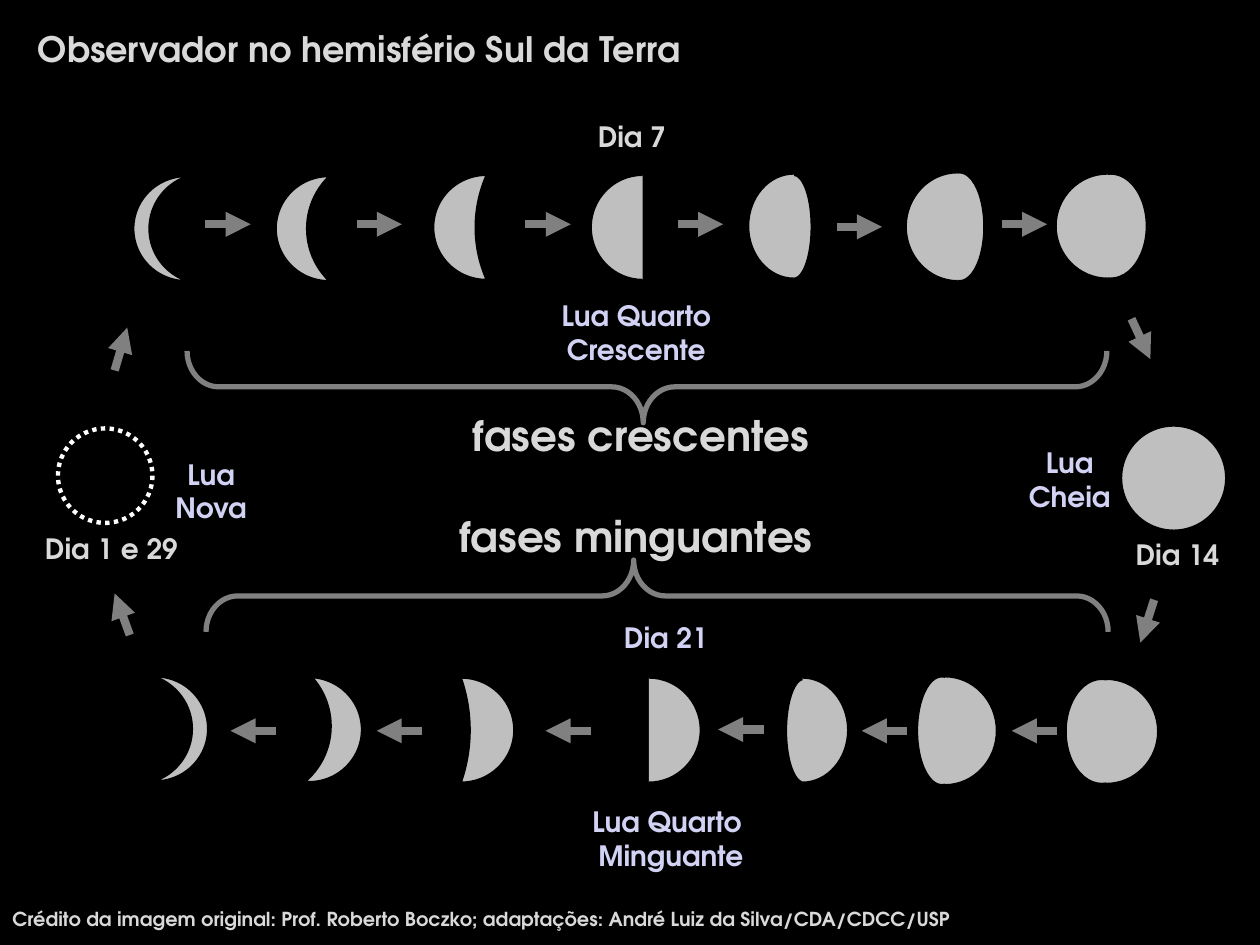
from dataclasses import dataclass
from typing import Any

from lxml.etree import SubElement
from pptx import Presentation
from pptx.dml.color import RGBColor
from pptx.enum.dml import MSO_LINE
from pptx.enum.shapes import MSO_CONNECTOR, MSO_SHAPE
from pptx.enum.text import MSO_AUTO_SIZE, PP_ALIGN
from pptx.oxml.ns import qn
from pptx.util import Emu, Pt

PX = 9144  # one px is 1/100 inch
BEND = 0.55  # handle length of a quarter arc


@dataclass(frozen=True)
class Theme:
    font: str = "TeX Gyre Adventor"
    night: str = "000000"
    glow: str = "BFBFBF"
    grey: str = "808080"
    ring: str = "FFFFFF"
    pale: str = "D9D9D9"
    lilac: str = "D2D2F4"
    title: int = 20
    phase: int = 24
    label: int = 16
    credit: int = 11


@dataclass(frozen=True)
class Box:
    x: int
    y: int
    w: int
    h: int


@dataclass(frozen=True)
class Label:
    box: Box
    text: str
    color: str
    size: int
    wrap: bool = True
    align: Any = PP_ALIGN.CENTER


@dataclass(frozen=True)
class Moon:
    box: Box
    lit: float
    flip: bool = False
    turn: int = 0


@dataclass(frozen=True)
class Half:
    box: Box
    side: int  # -1 bulges left, 1 bulges right


@dataclass(frozen=True)
class Brace:
    box: Box
    turn: int
    tip: float


@dataclass(frozen=True)
class Arrow:
    x: int
    y: int
    to_x: int
    to_y: int


T = Theme()


def px(n: float) -> Emu:
    return Emu(round(n * PX))


def rgb(code: str) -> RGBColor:
    return RGBColor.from_string(code)


def style(item: Any, form: dict[str, Any]) -> None:
    for key, val in form.items():
        setattr(item, key, val)


def paint(shape: Any, fill: str | None, line: str, width: float = 1) -> None:
    shape.shadow.inherit = False
    for part, code in ((shape.fill, fill), (shape.line.fill, line)):
        if code is None:
            part.background()
        else:
            part.solid()
            part.fore_color.rgb = rgb(code)
    shape.line.width = Pt(width)


def add_form(page: Any, kind: Any, box: Box) -> Any:
    return page.add_shape(kind, px(box.x), px(box.y), px(box.w), px(box.h))


def add_disc(page: Any, box: Box) -> Any:
    disc = add_form(page, MSO_SHAPE.OVAL, box)
    paint(disc, T.glow, T.night)
    return disc


def add_moon(page: Any, moon: Moon) -> None:
    shape = add_form(page, MSO_SHAPE.MOON, moon.box)
    paint(shape, T.glow, T.night)
    shape.adjustments[0] = moon.lit
    shape.rotation = moon.turn
    if moon.flip:
        shape._element.spPr.find(qn("a:xfrm")).set("flipH", "1")


def add_half(page: Any, half: Half) -> None:
    box = half.box
    flat, edge = (box.w, 0) if half.side < 0 else (0, box.w)
    mid = box.h / 2
    lean, rise = flat + (edge - flat) * BEND, mid * (1 - BEND)
    pen = page.build_freeform(px(box.x + flat), px(box.y), scale=1.0)
    pen.add_line_segments([(px(box.x + edge), px(box.y + mid)),
                           (px(box.x + flat), px(box.y + box.h))])
    shape = pen.convert_to_shape()
    paint(shape, T.glow, T.night)
    # Two curved paths: the lined arc, then the filled half without a line
    arc = [("moveTo", [(flat, 0)]),
           ("cubicBezTo", [(lean, 0), (edge, rise), (edge, mid)]),
           ("cubicBezTo", [(edge, box.h - rise), (lean, box.h), (flat, box.h)])]
    fan = [*arc, ("lnTo", [(flat, mid)]), ("close", [])]
    paths = shape._element.spPr.find(qn("a:custGeom")).find(qn("a:pathLst"))
    paths.remove(paths[0])
    for key, val, moves in (("fill", "none", arc), ("stroke", "0", fan)):
        track = SubElement(paths, qn("a:path"),
                           {"w": str(px(box.w)), "h": str(px(box.h)), key: val})
        for move, spots in moves:
            node = SubElement(track, qn("a:" + move))
            for x, y in spots:
                SubElement(node, qn("a:pt"), {"x": str(px(x)), "y": str(px(y))})


def add_brace(page: Any, brace: Brace) -> None:
    shape = add_form(page, MSO_SHAPE.LEFT_BRACE, brace.box)
    paint(shape, None, T.grey, 3)
    shape.rotation = brace.turn
    shape.adjustments[0] = 0.44
    shape.adjustments[1] = brace.tip


def add_arrow(page: Any, arrow: Arrow) -> None:
    line = page.add_connector(MSO_CONNECTOR.STRAIGHT, px(arrow.x), px(arrow.y),
                              px(arrow.to_x), px(arrow.to_y))
    line.line.width = Pt(4.75)
    line.line.color.rgb = rgb(T.grey)
    SubElement(line.line._get_or_add_ln(), qn("a:tailEnd"), {"type": "triangle"})
    SubElement(line._element.spPr, qn("a:effectLst"))


def add_label(page: Any, label: Label) -> None:
    box = label.box
    frame = page.add_textbox(px(box.x), px(box.y), px(box.w), px(box.h)).text_frame
    style(frame, {"text": label.text, "word_wrap": label.wrap,
                  "auto_size": MSO_AUTO_SIZE.SHAPE_TO_FIT_TEXT})
    for para in frame.paragraphs:
        para.alignment = label.align
        for run in para.runs:
            style(run.font, {"name": T.font, "size": Pt(label.size), "bold": True})
            run.font.color.rgb = rgb(label.color)


# Moons
MOONS = [
    Moon(Box(106, 140, 42, 83), 0.296), Moon(Box(219, 140, 42, 83), 0.583),
    Moon(Box(344, 139, 42, 83), 0.792),
    Moon(Box(123, 537, 42, 83), 0.296, flip=True),
    Moon(Box(245, 539, 42, 83), 0.583, turn=184),
    Moon(Box(366, 538, 42, 83), 0.833, flip=True),
]
DISCS = [
    Box(616, 139, 28, 82), Box(742, 137, 39, 86), Box(853, 138, 57, 83),
    Box(890, 338, 83, 83),
    Box(624, 539, 28, 82), Box(728, 537, 39, 86), Box(846, 539, 57, 83),
]
HALVES = [
    Half(Box(469, 139, 41, 83), -1), Half(Box(594, 138, 36, 83), -1),
    Half(Box(719, 137, 41, 86), -1), Half(Box(838, 138, 41, 83), -1),
    Half(Box(515, 538, 41, 83), 1), Half(Box(637, 538, 36, 83), 1),
    Half(Box(750, 537, 41, 86), 1), Half(Box(878, 539, 41, 83), 1),
]

# Arrows: a row to the right, a row to the left, and the four turns
STEP = 36
ARROWS = [
    *(Arrow(x, y, x + STEP, y) for x, y in (
        (163, 178), (283, 178), (417, 178), (538, 178), (664, 180), (795, 178))),
    *(Arrow(x, y, x - STEP, y) for x, y in (
        (219, 580), (335, 580), (469, 580), (606, 579), (720, 580), (839, 580))),
    Arrow(91, 294, 101, 260), Arrow(103, 504, 91, 471),
    Arrow(898, 253, 913, 285), Arrow(916, 476, 905, 510),
]
BRACES = [Brace(Box(485, -58, 57, 730), 270, 0.496),
          Brace(Box(493, 115, 57, 716), 90, 0.526)]

# Wording
LABELS = [
    Label(Box(20, 17, 588, 44), "Observador no hemisfério Sul da Terra",
          T.pale, T.title, align=PP_ALIGN.LEFT),
    Label(Box(20, 417, 137, 37), "Dia 1 e 29", T.pale, T.label),
    Label(Box(128, 358, 79, 64), "Lua\nNova", T.lilac, T.label, wrap=False),
    Label(Box(438, 90, 127, 37), "Dia 7", T.pale, T.label),
    Label(Box(382, 232, 246, 64), "Lua Quarto Crescente", T.lilac, T.label),
    Label(Box(889, 422, 91, 37), "Dia 14", T.pale, T.label),
    Label(Box(806, 349, 86, 64), "Lua\nCheia", T.lilac, T.label, wrap=False),
    Label(Box(478, 488, 101, 37), "Dia 21", T.lilac, T.label),
    Label(Box(459, 634, 147, 64), "Lua Quarto \nMinguante", T.lilac, T.label, wrap=False),
    Label(Box(336, 320, 345, 50), "fases crescentes", T.pale, T.phase),
    Label(Box(305, 400, 399, 50), "fases minguantes", T.pale, T.phase),
    Label(Box(0, 715, 879, 29),
          "Crédito da imagem original: Prof. Roberto Boczko; "
          "adaptações: André Luiz da Silva/CDA/CDCC/USP",
          T.pale, T.credit, align=PP_ALIGN.LEFT),
]


def main() -> None:
    deck = Presentation()
    style(deck, {"slide_width": px(1000), "slide_height": px(750)})
    slide = deck.slides.add_slide(deck.slide_layouts[6])
    slide.background.fill.solid()
    slide.background.fill.fore_color.rgb = rgb(T.night)
    page = slide.shapes

    # New moon, a dotted ring
    ring = add_disc(page, Box(46, 340, 75, 75))
    paint(ring, T.night, T.ring, 2.5)
    ring.line.dash_style = MSO_LINE.ROUND_DOT

    for draw, items in ((add_moon, MOONS), (add_disc, DISCS), (add_half, HALVES),
                        (add_label, LABELS), (add_brace, BRACES), (add_arrow, ARROWS)):
        for item in items:
            draw(page, item)
    deck.save("out.pptx")


if __name__ == "__main__":
    main()
